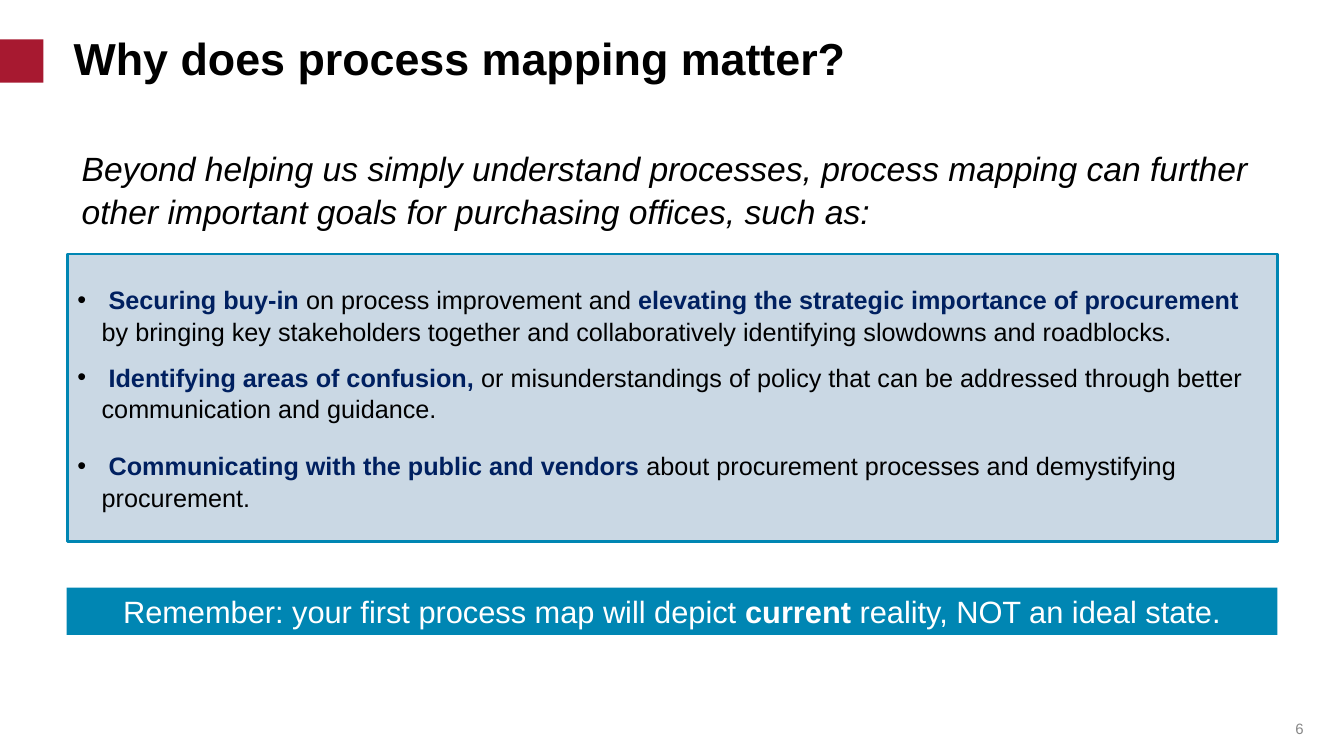
from pptx import Presentation
from pptx.dml.color import RGBColor
from pptx.enum.shapes import MSO_SHAPE
from pptx.enum.text import MSO_ANCHOR, MSO_AUTO_SIZE, PP_ALIGN
from pptx.oxml import parse_xml
from pptx.oxml.ns import nsdecls
from pptx.util import Pt

PX = 9144  # EMU in one px, 100 px to the inch
BLACK = RGBColor(0x00, 0x00, 0x00)
WHITE = RGBColor(0xFF, 0xFF, 0xFF)
GREY = RGBColor(0x88, 0x88, 0x88)
RED = RGBColor(0xA7, 0x19, 0x30)
NAVY = RGBColor(0x00, 0x20, 0x60)
TEAL = RGBColor(0x00, 0x86, 0xB3)
PALE = RGBColor(0xCA, 0xD8, 0xE4)

deck = Presentation()
deck.slide_width, deck.slide_height = 1333 * PX, 750 * PX
slide = deck.slides.add_slide(deck.slide_layouts[5])
shapes = slide.shapes


def add_box(left, top, width, height, fill, line=None):
    box = shapes.add_shape(MSO_SHAPE.RECTANGLE, left * PX, top * PX,
                           width * PX, height * PX)
    box.shadow.inherit = False
    box.fill.solid()
    box.fill.fore_color.rgb = fill
    if line is None:
        box.line.fill.background()
    else:
        box.line.color.rgb = line
        box.line.width = Pt(2)
    box.text_frame.word_wrap = True
    box.text_frame.vertical_anchor = MSO_ANCHOR.MIDDLE
    return box


def add_run(para, text, size, color, bold=False, italic=False):
    run = para.add_run()
    run.text = text
    font = run.font
    font.name, font.size = "Arial", Pt(size)
    font.bold, font.italic = bold, italic
    font.color.rgb = color


# Red marker
add_box(0, 39, 43, 43, RED)

# Title, intro and page number
title = shapes.title
title.left, title.top, title.width, title.height = 66 * PX, 29 * PX, 1200 * PX, 59 * PX
intro = shapes.add_textbox(62 * PX, 141 * PX, 1200 * PX, 100 * PX)
page = shapes.add_textbox(1225 * PX, 703 * PX, 75 * PX, 40 * PX)

for item, pad, anchor, align in (
        (title, 0, MSO_ANCHOR.BOTTOM, PP_ALIGN.LEFT),
        (intro, 4, MSO_ANCHOR.TOP, PP_ALIGN.LEFT),
        (page, 4, MSO_ANCHOR.MIDDLE, PP_ALIGN.RIGHT)):
    frame = item.text_frame
    frame.word_wrap = True
    frame.auto_size = MSO_AUTO_SIZE.NONE
    frame.vertical_anchor = anchor
    frame.margin_left = frame.margin_right = 7 * PX
    frame.margin_top, frame.margin_bottom = pad * PX, 4 * PX
    frame.paragraphs[0].alignment = align

add_run(title.text_frame.paragraphs[0], "Why does process mapping matter?",
        32, BLACK, bold=True)
para = intro.text_frame.paragraphs[0]
para.line_spacing = 1.05
para._p.get_or_add_pPr().set("marL", str(12 * PX))
add_run(para, "Beyond helping us simply understand processes, process mapping can "
        "further other important goals for purchasing offices, such as:",
        24, BLACK, italic=True)
add_run(page.text_frame.paragraphs[0], "6", 10.7, GREY)

# Goals: runs alternate between navy bold and black
goals = (
    (0, (" Securing buy-in ", "on process improvement and ",
         "elevating the strategic importance of procurement ",
         "by bringing key stakeholders together and collaboratively "
         "identifying slowdowns and roadblocks.")),
    (8, (" Identifying areas of confusion,",
         " or misunderstandings of policy that can be addressed through "
         "better communication and guidance.")),
    (8, (" Communicating with the public and vendors ",
         "about procurement processes and demystifying procurement.")),
)
frame = add_box(67, 252, 1200, 285, PALE, TEAL).text_frame
for row, (after, parts) in enumerate(goals):
    para = frame.add_paragraph() if row else frame.paragraphs[0]
    para.alignment = PP_ALIGN.LEFT
    para.line_spacing = 1.05
    para.space_before, para.space_after = Pt(10), Pt(after)
    props = para._p.get_or_add_pPr()
    props.set("marL", str(24 * PX))
    props.set("indent", str(-24 * PX))
    for xml in (f'<a:buClr {nsdecls("a")}><a:srgbClr val="{BLACK}"/></a:buClr>',
                f'<a:buFont {nsdecls("a")} typeface="Arial"/>',
                f'<a:buChar {nsdecls("a")} char="•"/>'):
        props.append(parse_xml(xml))
    for spot, text in enumerate(parts):
        key = spot % 2 == 0
        add_run(para, text, 18, NAVY if key else BLACK, bold=key)

# Reminder banner
para = add_box(66, 583, 1201, 47, TEAL).text_frame.paragraphs[0]
para.alignment = PP_ALIGN.CENTER
for text, bold in (("Remember: your first process map will depict ", False),
                   ("current ", True),
                   ("reality, NOT an ideal state.", False)):
    add_run(para, text, 22, WHITE, bold)

deck.save("out.pptx")
